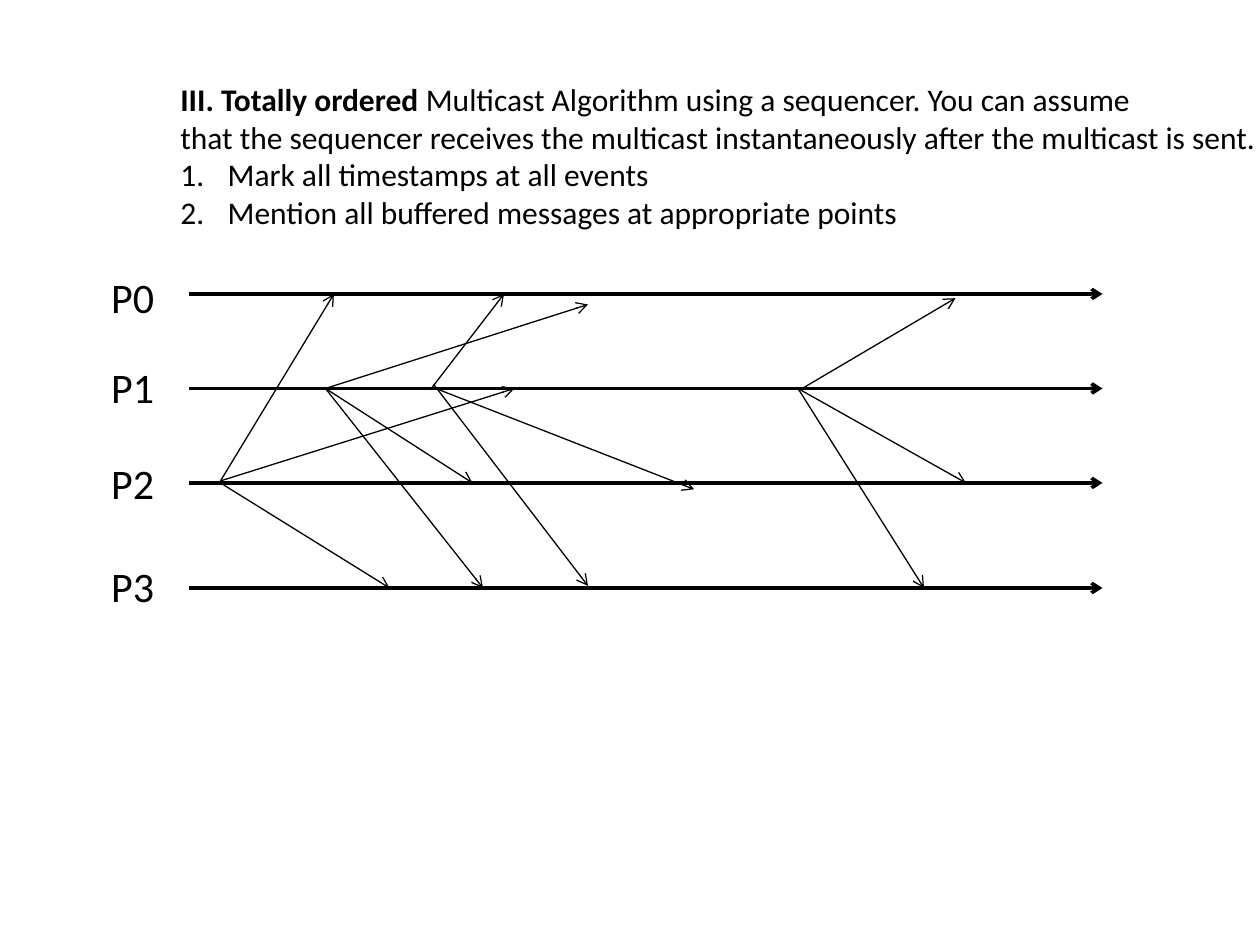
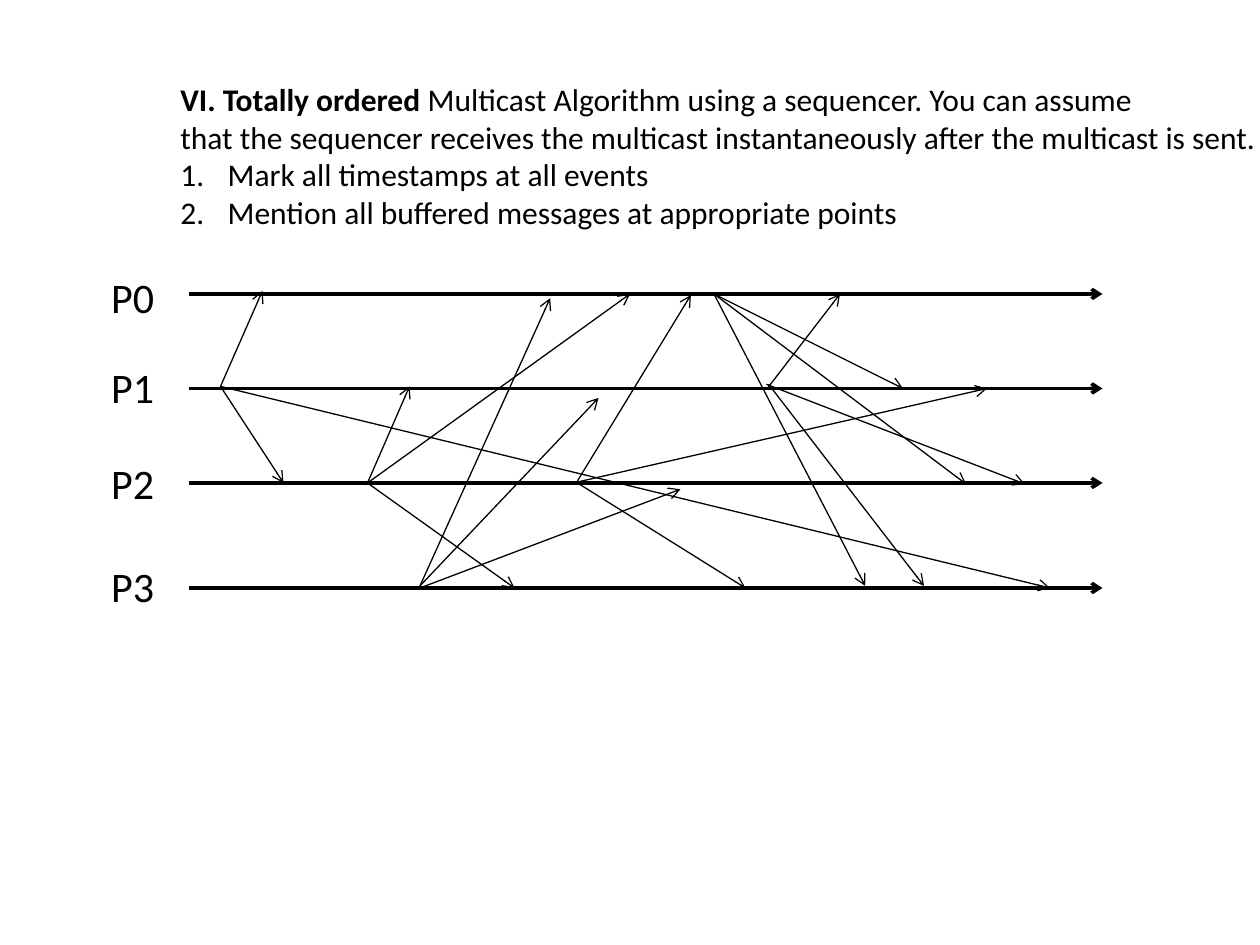
from dataclasses import dataclass
from enum import IntEnum
from typing import NamedTuple

from lxml.etree import SubElement
from pptx import Presentation
from pptx.dml.color import RGBColor
from pptx.enum.shapes import MSO_CONNECTOR
from pptx.enum.text import MSO_AUTO_SIZE
from pptx.oxml.ns import qn
from pptx.slide import Slide
from pptx.text.text import TextFrame, _Paragraph
from pptx.util import Emu, Inches, Pt


@dataclass(frozen=True)
class Theme:
    font: str = "Calibri"
    ink: RGBColor = RGBColor(0, 0, 0)
    task_size: int = 18
    process_size: int = 24
    timeline_weight: float = 2
    message_weight: float = 0.75


THEME = Theme()

# Grid: 120 columns by 90 rows of square cells
WIDTH, HEIGHT = Inches(10), Inches(7.5)
CELL = WIDTH / 120
TIMELINE_START, TIMELINE_END = 18, 105
LABEL_COLUMN = 9.4


class Process(IntEnum):
    P0 = 0
    P1 = 1
    P2 = 2
    P3 = 3


P0, P1, P2, P3 = Process
TIMELINE_ROWS = {P0: 28, P1: 37, P2: 46, P3: 56}
LABEL_ROWS = {P0: 25.3, P1: 33.8, P2: 43, P3: 52.8}


class Event(NamedTuple):
    """A point on a process timeline; offset is rows below the line."""
    process: Process
    column: float
    offset: float = 0

    @property
    def row(self) -> float:
        return TIMELINE_ROWS[self.process] + self.offset


class Message(NamedTuple):
    sent: Event
    received: Event


class Exercise(NamedTuple):
    title: str
    messages: list[Message]


def multicast(sent: Event, *receipts: Event) -> list[Message]:
    return [Message(sent, received) for received in receipts]


# Wording shared by both exercises
INTRO = "Multicast Algorithm using a sequencer. You can assume"
ASSUMPTION = ("that the sequencer receives the multicast instantaneously "
              "after the multicast is sent.")
TASKS = ("Mark all timestamps at all events",
         "Mention all buffered messages at appropriate points")

EXERCISES = [
    Exercise("III. Totally ordered ", [
        *multicast(Event(P1, 31), Event(P0, 56, 1), Event(P2, 45), Event(P3, 46)),
        Message(Event(P1, 41, 0.1), Event(P0, 48)),
        Message(Event(P1, 41.5), Event(P2, 66.1, 0.6)),
        Message(Event(P1, 41.3, -0.4), Event(P3, 56, -0.2)),
        *multicast(Event(P2, 21, -0.2), Event(P1, 49), Event(P0, 31.8)),
        Message(Event(P2, 21), Event(P3, 37.1)),
        *multicast(Event(P1, 76), Event(P2, 92), Event(P3, 88)),
        Message(Event(P1, 76.4), Event(P0, 91, 0.4)),
    ]),
    Exercise("VI. Totally ordered ", [
        *multicast(Event(P1, 21, -0.2), Event(P0, 25, -0.3), Event(P2, 27),
                   Event(P3, 100)),
        Message(Event(P1, 73, 0.1), Event(P0, 80)),
        Message(Event(P1, 73, -0.4), Event(P2, 97.6, 0.1)),
        Message(Event(P1, 73.2, -0.4), Event(P3, 88, -0.2)),
        Message(Event(P2, 54.6), Event(P1, 94)),
        Message(Event(P2, 55, -0.2), Event(P0, 65.8, 0.1)),
        Message(Event(P2, 55), Event(P3, 71)),
        *multicast(Event(P3, 40, -0.2), Event(P1, 57, 0.9), Event(P0, 52.4, 0.4)),
        Message(Event(P3, 40), Event(P2, 64.8, 0.6)),
        *multicast(Event(P2, 35), Event(P1, 39, -0.2), Event(P3, 49), Event(P0, 60)),
        *multicast(Event(P0, 68), Event(P1, 86), Event(P2, 92, 0.1),
                   Event(P3, 82.4, -0.2)),
    ]),
]


def cells(count: float) -> Emu:
    return Emu(round(count * CELL))


def draw_arrow(slide: Slide, start: Event, end: Event, weight: float) -> None:
    arrow = slide.shapes.add_connector(
        MSO_CONNECTOR.STRAIGHT, cells(start.column), cells(start.row),
        cells(end.column), cells(end.row))
    arrow.line.color.rgb = THEME.ink
    arrow.line.width = Pt(weight)
    SubElement(arrow.line._get_or_add_ln(), qn("a:tailEnd"), type="arrow")
    SubElement(arrow._element.spPr, qn("a:effectLst"))


def add_text_frame(slide: Slide, column: float, row: float,
                   columns: float, rows: float) -> TextFrame:
    frame = slide.shapes.add_textbox(
        cells(column), cells(row), cells(columns), cells(rows)).text_frame
    frame.word_wrap = False
    frame.auto_size = MSO_AUTO_SIZE.SHAPE_TO_FIT_TEXT
    return frame


def add_run(paragraph: _Paragraph, text: str, size: int, bold: bool = False) -> None:
    run = paragraph.add_run()
    run.text = text
    run.font.name = THEME.font
    run.font.size = Pt(size)
    run.font.bold = bold
    run.font.color.rgb = THEME.ink


def number(paragraph: _Paragraph) -> None:
    properties = paragraph._p.get_or_add_pPr()
    indent = cells(4.5)
    properties.set("marL", str(indent))
    properties.set("indent", str(-indent))
    SubElement(properties, qn("a:buFont"), typeface="+mj-lt")
    SubElement(properties, qn("a:buAutoNum"), type="arabicPeriod")


def draw_instructions(slide: Slide, title: str) -> None:
    frame = add_text_frame(slide, 16, 7, 105.6, 15.7)
    opening = frame.paragraphs[0]
    add_run(opening, title, THEME.task_size, bold=True)
    add_run(opening, INTRO, THEME.task_size)
    add_run(frame.add_paragraph(), ASSUMPTION, THEME.task_size)
    for task in TASKS:
        step = frame.add_paragraph()
        number(step)
        add_run(step, task, THEME.task_size)


def draw_timelines(slide: Slide) -> None:
    for process in Process:
        draw_arrow(slide, Event(process, TIMELINE_START),
                   Event(process, TIMELINE_END), THEME.timeline_weight)
        label = add_text_frame(slide, LABEL_COLUMN, LABEL_ROWS[process], 6.6, 6)
        add_run(label.paragraphs[0], process.name, THEME.process_size)


def main() -> None:
    deck = Presentation()
    deck.slide_width, deck.slide_height = WIDTH, HEIGHT
    for exercise in EXERCISES:
        slide = deck.slides.add_slide(deck.slide_layouts[6])
        draw_timelines(slide)
        for message in exercise.messages:
            draw_arrow(slide, message.sent, message.received, THEME.message_weight)
        draw_instructions(slide, exercise.title)
    deck.save("out.pptx")


if __name__ == "__main__":
    main()
